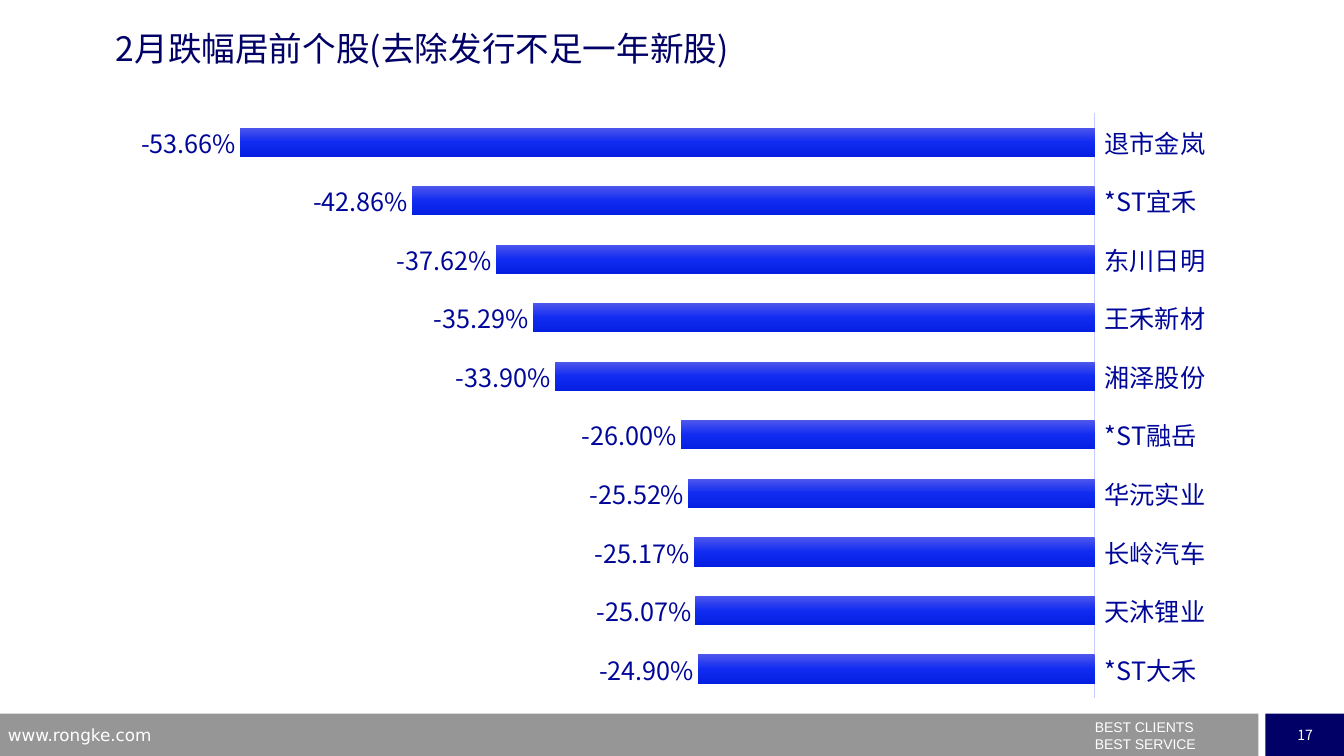
import copy

import pptx
import pptx.chart.data
import pptx.dml.color
import pptx.enum.chart
import pptx.enum.shapes
import pptx.enum.text
import pptx.oxml
import pptx.oxml.ns
import pptx.util
from pptx.util import Inches

RGBColor = pptx.dml.color.RGBColor
NAVY = RGBColor(0x00, 0x00, 0x66)
GRAY = RGBColor(0x96, 0x96, 0x96)
WHITE = RGBColor(0xFF, 0xFF, 0xFF)
LABEL_BLUE = RGBColor(0x00, 0x07, 0x98)
AXIS_BLUE = RGBColor(0xC9, 0xCC, 0xFF)
BAR_STOPS = [
    (0, RGBColor(0x4E, 0x57, 0xEC)),
    (0.5, RGBColor(0x11, 0x2B, 0xF1)),
    (1, RGBColor(0x04, 0x1E, 0xE2)),
]
CJK_FONT = "Noto Sans CJK SC"
PERCENT = "0.00%"
DECLINES = [
    ("*ST大禾", -0.249),
    ("天沐锂业", -0.2507),
    ("长岭汽车", -0.2517),
    ("华沅实业", -0.2552),
    ("*ST融岳", -0.26),
    ("湘泽股份", -0.339),
    ("王禾新材", -0.3529),
    ("东川日明", -0.3762),
    ("*ST宜禾", -0.4286),
    ("退市金岚", -0.5366),
]


def style_font(font, name, size, color):
    font.name = name
    font.size = pptx.util.Pt(size)
    font.color.rgb = color
    east_asian = pptx.oxml.parse_xml(
        f'<a:ea {pptx.oxml.ns.nsdecls("a")} typeface="{name}"/>'
    )
    font._element.append(east_asian)


def write_lines(frame, lines, name, size, color, alignment=None):
    frame.text = "\n".join(lines)
    for paragraph in frame.paragraphs:
        paragraph.alignment = alignment
        style_font(paragraph.font, name, size, color)


def add_block(slide, left, width, color):
    shape = slide.shapes.add_shape(
        pptx.enum.shapes.MSO_SHAPE.RECTANGLE,
        Inches(left), Inches(7.08), Inches(width), Inches(0.42),
    )
    shape.shadow.inherit = False
    shape.fill.solid()
    shape.fill.fore_color.rgb = color
    shape.line.fill.background()
    return shape


def add_text(slide, box, lines, name, size, color, insets):
    shape = slide.shapes.add_textbox(*map(Inches, box))
    frame = shape.text_frame
    frame.word_wrap = True
    frame.margin_left = frame.margin_right = Inches(insets[0])
    frame.margin_top = frame.margin_bottom = Inches(insets[1])
    write_lines(frame, lines, name, size, color)


def fill_bars(series):
    fill = series.format.fill
    fill.gradient()
    fill.gradient_angle = 270
    stop_list = series._element.xpath(".//a:gsLst")[0]
    stop_list.append(copy.deepcopy(stop_list[-1]))
    for stop, (position, color) in zip(fill.gradient_stops, BAR_STOPS):
        stop.position = position
        stop.color.rgb = color


def fix_plot_area(chart, x, y, width, height):
    plot_area = chart._chartSpace.chart.plotArea
    for old_layout in plot_area.xpath("c:layout"):
        plot_area.remove(old_layout)
    layout = pptx.oxml.parse_xml(
        f'<c:layout {pptx.oxml.ns.nsdecls("c")}><c:manualLayout>'
        '<c:layoutTarget val="inner"/><c:xMode val="edge"/><c:yMode val="edge"/>'
        f'<c:x val="{x}"/><c:y val="{y}"/><c:w val="{width}"/><c:h val="{height}"/>'
        "</c:manualLayout></c:layout>"
    )
    plot_area.insert(0, layout)


def add_decline_chart(slide):
    data = pptx.chart.data.CategoryChartData(number_format=PERCENT)
    data.categories = [stock for stock, change in DECLINES]
    data.add_series("Series 1", [change for stock, change in DECLINES])
    chart = slide.shapes.add_chart(
        pptx.enum.chart.XL_CHART_TYPE.BAR_CLUSTERED,
        Inches(1.16), Inches(1), Inches(11.02), Inches(6.05), data,
    ).chart
    chart.has_legend = False
    chart.has_title = False
    style_font(chart.font, CJK_FONT, 18, LABEL_BLUE)
    fix_plot_area(chart, 0.02, 0.02, 0.86, 0.96)

    category_axis = chart.category_axis
    category_axis.major_tick_mark = pptx.enum.chart.XL_TICK_MARK.NONE
    category_axis.tick_label_position = pptx.enum.chart.XL_TICK_LABEL_POSITION.HIGH
    category_axis.format.line.color.rgb = AXIS_BLUE
    category_axis.format.line.width = pptx.util.Pt(0.75)
    style_font(category_axis.tick_labels.font, CJK_FONT, 18, LABEL_BLUE)

    value_axis = chart.value_axis
    value_axis.minimum_scale = -0.6
    value_axis.maximum_scale = 0
    value_axis.has_major_gridlines = False
    value_axis.visible = False

    plot = chart.plots[0]
    plot.gap_width = 100
    plot.vary_by_categories = False
    plot.has_data_labels = True
    labels = plot.data_labels
    labels.show_value = True
    labels.number_format = PERCENT
    labels.number_format_is_linked = False
    labels.position = pptx.enum.chart.XL_LABEL_POSITION.OUTSIDE_END
    style_font(labels.font, CJK_FONT, 18, LABEL_BLUE)

    series = plot.series[0]
    series.invert_if_negative = False
    fill_bars(series)


def add_footer(slide):
    add_block(slide, 0, 12.48, GRAY)
    page_block = add_block(slide, 12.55, 0.79, NAVY)
    frame = page_block.text_frame
    frame.vertical_anchor = pptx.enum.text.MSO_ANCHOR.MIDDLE
    write_lines(frame, ["17"], CJK_FONT, 10, WHITE, pptx.enum.text.PP_ALIGN.CENTER)
    add_text(slide, (10.76, 7.13, 1.7, 0.36), ["BEST CLIENTS", "BEST SERVICE"],
             "Arial", 10, WHITE, (0.1, 0))
    add_text(slide, (-0.02, 7.14, 3.22, 0.26), ["www.rongke.com"],
             "DejaVu Sans", 12, WHITE, (0.1, 0.05))


def main():
    presentation = pptx.Presentation()
    presentation.slide_width = Inches(13.33)
    presentation.slide_height = Inches(7.5)
    slide = presentation.slides.add_slide(presentation.slide_layouts[6])
    add_footer(slide)
    add_text(slide, (1.15, 0.28, 9, 0.58), ["2月跌幅居前个股(去除发行不足一年新股)"],
             CJK_FONT, 24, NAVY, (0, 0))
    add_decline_chart(slide)
    presentation.save("out.pptx")


if __name__ == "__main__":
    main()
